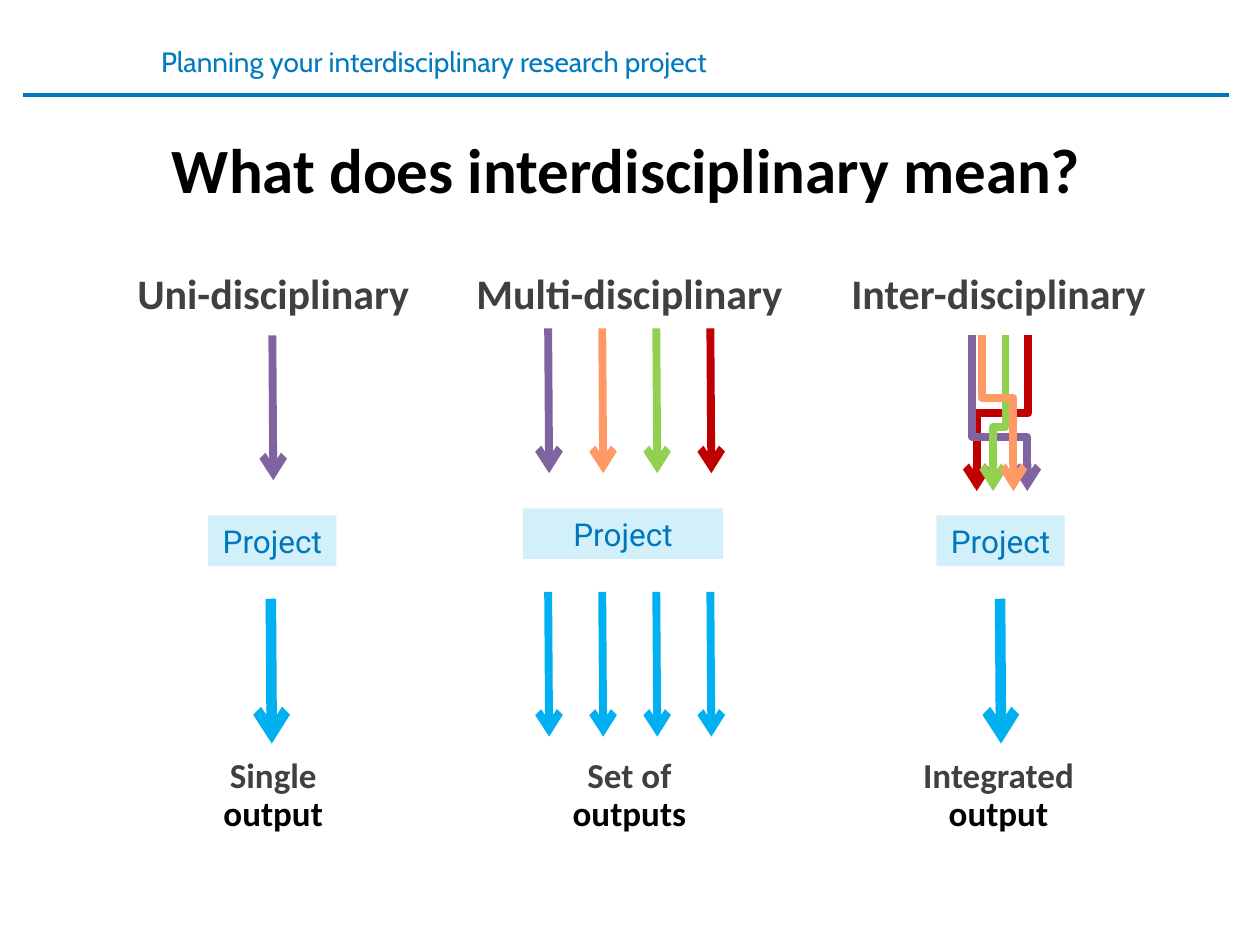
from lxml.etree import SubElement
from pptx import Presentation
from pptx.dml.color import RGBColor
from pptx.enum.shapes import MSO_CONNECTOR as Link, MSO_SHAPE as Shape
from pptx.enum.text import MSO_ANCHOR as Anchor, PP_ALIGN as Align
from pptx.oxml.ns import qn
from pptx.util import Cm, Pt

BLACK = RGBColor(0x00, 0x00, 0x00)
GREY = RGBColor(0x40, 0x40, 0x40)
HEADER_BLUE = RGBColor(0x00, 0x7A, 0xC0)
RULE_BLUE = RGBColor(0x00, 0x76, 0xBD)
PALE_BLUE = RGBColor(0xD2, 0xF0, 0xFA)
SKY = RGBColor(0x00, 0xB0, 0xF0)
PURPLE = RGBColor(0x80, 0x64, 0xA2)
ORANGE = RGBColor(0xFF, 0x99, 0x66)
GREEN = RGBColor(0x92, 0xD0, 0x50)
RED = RGBColor(0xC0, 0x00, 0x00)

# Content: all lengths in cm; "lift" raises a column's arrows and box
HEADER = "Planning your interdisciplinary research project"
TITLE = "What does interdisciplinary mean?"
COLUMNS = [
    dict(heading="Uni-disciplinary", output=("Single", "output"),
         center=5.51, width=6.05, box_center=5.49, box_width=2.59, lift=0,
         inputs=[PURPLE], input_x=5.49, outputs=1, output_x=5.46, weight=6),
    dict(heading="Multi-disciplinary", output=("Set of", "outputs"),
         center=12.69, width=6.76, box_center=12.56, box_width=4.04, lift=0.14,
         inputs=[PURPLE, ORANGE, GREEN, RED], input_x=11.05,
         outputs=4, output_x=11.05, weight=4.5),
    dict(heading="Inter-disciplinary", output=("Integrated", "output"),
         center=20.13, width=6.53, box_center=20.17, box_width=2.59, lift=0,
         inputs=[], input_x=0, outputs=1, output_x=20.16, weight=6),
]
# Crossing arrows: colour, start x, end x, height of the bend (share of drop)
CROSSINGS = [
    (RED, 20.73, 19.69, 0.5),
    (PURPLE, 19.6, 20.71, 0.652),
    (GREEN, 20.27, 20.02, 0.589),
    (ORANGE, 19.79, 20.43, 0.4),
]
INPUT_TOP, OUTPUT_TOP, BOX_TOP = 6.76, 12.07, 10.39
ARROW_DROP, CROSSING_DROP = 2.92, 3.14
ARROW_STEP, ARROW_SLANT = 1.09, 0.02

deck = Presentation()
deck.slide_width, deck.slide_height = Cm(25.4), Cm(19.05)
page = deck.slides.add_slide(deck.slide_layouts[6])


def add_span(para, text, font, size, color, bold=False):
    span = para.add_run()
    span.text = text
    span.font.name, span.font.size = font, Pt(size)
    span.font.bold, span.font.color.rgb = bold, color


def add_text(left, top, width, height, align=Align.CENTER):
    box = page.shapes.add_textbox(Cm(left), Cm(top), Cm(width), Cm(height))
    box.text_frame.word_wrap = False
    box.text_frame.paragraphs[0].alignment = align
    return box.text_frame


def add_line(kind, x1, y1, x2, y2, color, weight, arrow=True):
    line = page.shapes.add_connector(kind, Cm(x1), Cm(y1), Cm(x2), Cm(y2))
    line.line.color.rgb, line.line.width = color, Pt(weight)
    if arrow:
        SubElement(line.line._get_or_add_ln(), qn("a:tailEnd"), type="arrow")
    SubElement(line._element.spPr, qn("a:effectLst"))
    return line


def add_crossing(color, start, end, bend):
    # An elbow runs sideways first, so it is laid flat and turned downwards
    middle_x, middle_y = (start + end) / 2, INPUT_TOP + CROSSING_DROP / 2
    half_drop, half_shift = CROSSING_DROP / 2, abs(end - start) / 2
    rightward = end > start
    side = 1 if rightward else -1
    elbow = add_line(Link.ELBOW, middle_x + side * half_drop, middle_y - half_shift,
                     middle_x - side * half_drop, middle_y + half_shift, color, 4.5)
    properties = elbow._element.spPr
    properties.find(qn("a:xfrm")).set("rot", str((270 if rightward else 90) * 60000))
    geometry = properties.find(qn("a:prstGeom"))
    adjustments = geometry.find(qn("a:avLst"))
    if adjustments is None:
        adjustments = SubElement(geometry, qn("a:avLst"))
    SubElement(adjustments, qn("a:gd"), name="adj1", fmla=f"val {round(bend * 100000)}")


def add_arrows(colors, left, top, weight):
    for index, color in enumerate(colors):
        x = left + index * ARROW_STEP
        add_line(Link.STRAIGHT, x, top, x + ARROW_SLANT, top + ARROW_DROP, color, weight)


# Header, rule and title
header = add_text(2.84, 0.71, 12.5, 1.02, Align.LEFT)
header.word_wrap = True
add_span(header.paragraphs[0], " ", "Roboto", 18, HEADER_BLUE)
add_span(header.paragraphs[0], HEADER, "Cabin", 16, HEADER_BLUE)
add_line(Link.STRAIGHT, 0.46, 1.91, 24.77, 1.91, RULE_BLUE, 2.25, arrow=False)
title = add_text(3.12, 2.51, 19.02, 1.8)
add_span(title.paragraphs[0], TITLE, "Calibri", 36, BLACK, True)

# Crossing inputs of the last column
for crossing in CROSSINGS:
    add_crossing(*crossing)

# Columns: heading, inputs, project box, outputs, result
for column in COLUMNS:
    left, lift = column["center"] - column["width"] / 2, column["lift"]
    heading = add_text(left, 5.26, column["width"], 1.27)
    add_span(heading.paragraphs[0], column["heading"], "Calibri", 24, GREY, True)

    add_arrows(column["inputs"], column["input_x"], INPUT_TOP - lift, 4.5)
    add_arrows([SKY] * column["outputs"], column["output_x"], OUTPUT_TOP - lift,
               column["weight"])

    project = page.shapes.add_shape(
        Shape.RECTANGLE, Cm(column["box_center"] - column["box_width"] / 2),
        Cm(BOX_TOP - lift), Cm(column["box_width"]), Cm(1.02))
    project.shadow.inherit = False
    project.fill.solid()
    project.fill.fore_color.rgb = PALE_BLUE
    project.line.fill.background()
    frame = project.text_frame
    frame.word_wrap, frame.vertical_anchor = False, Anchor.TOP
    frame.paragraphs[0].alignment = Align.CENTER
    add_span(frame.paragraphs[0], "Project", "Roboto", 18, RULE_BLUE)

    result = add_text(column["center"] - 1.8, 15.16, 3.6, 1.83)
    paras = [result.paragraphs[0], result.add_paragraph()]
    for para, text, color in zip(paras, column["output"], (GREY, BLACK)):
        para.alignment, para.line_spacing = Align.CENTER, Pt(21.6)
        add_span(para, text, "Calibri", 20, color, True)

deck.save("out.pptx")
